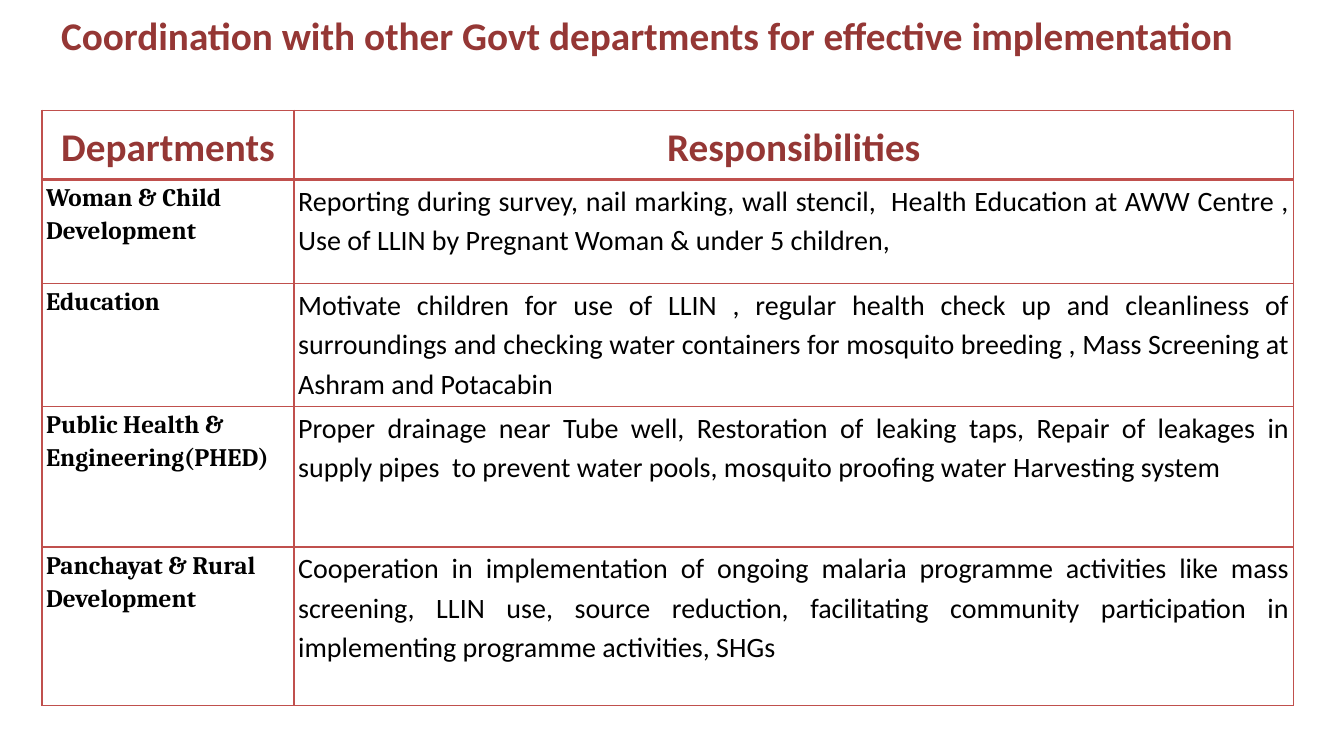
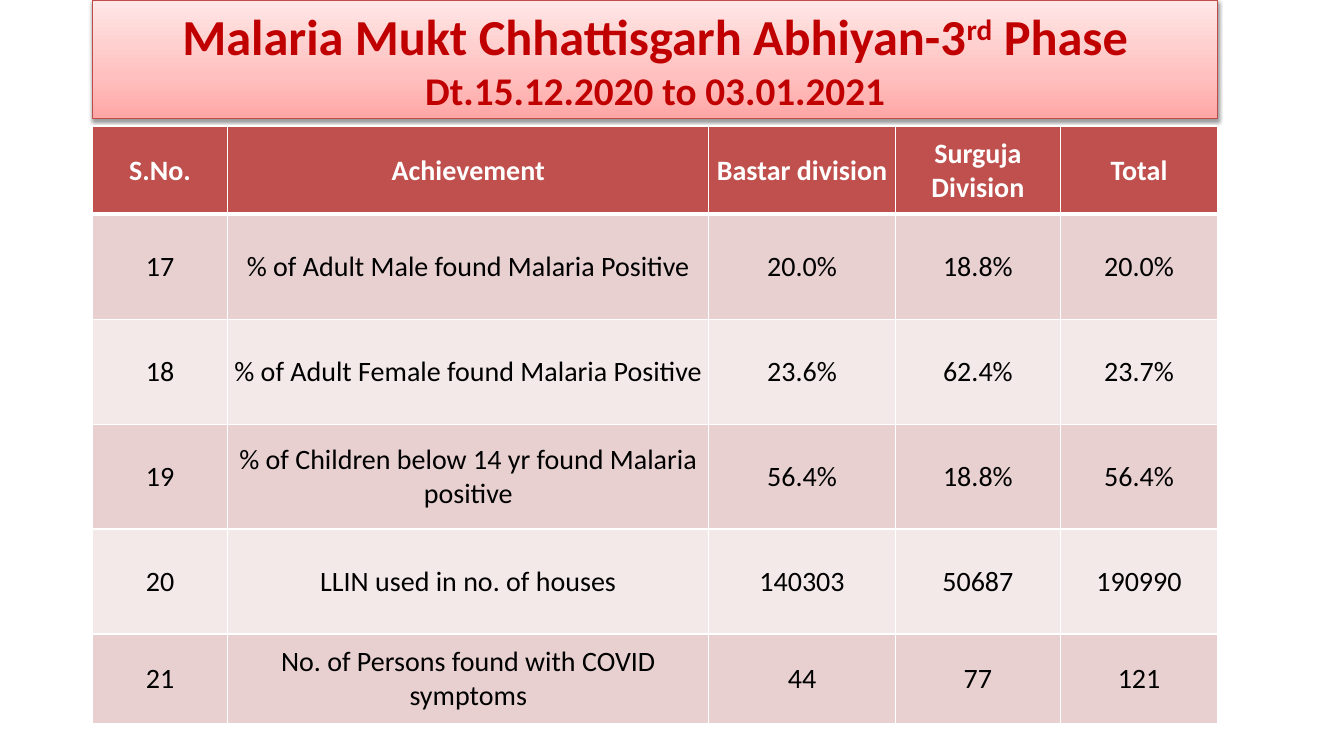
import dataclasses

import pptx
import pptx.dml.color
import pptx.enum.text
import pptx.oxml
import pptx.oxml.ns
import pptx.util

ALIGN = pptx.enum.text.PP_ALIGN
ANCHOR = pptx.enum.text.MSO_ANCHOR
EMU_PER_PX = 9525
TITLE_ONLY = 5


@dataclasses.dataclass(frozen=True)
class Theme:
    body_font: str = "Calibri"
    label_font: str = "Cambria"
    white: str = "FFFFFF"
    black: str = "000000"
    accent: str = "C0504D"
    heading: str = "953735"
    banner_text: str = "C00000"
    banner_line: str = "BF4C48"
    banner_stops: tuple = ((0, "FFA6A5"), (35, "FFC0BF"), (100, "FFE7E7"))
    bands: tuple = ("E8D0D0", "F4E9E9")
    banner_size: int = 36
    heading_size: int = 28
    body_size: int = 20
    label_size: int = 18


@dataclasses.dataclass(frozen=True)
class CellStyle:
    size: int
    color: str
    fill: str
    bold: bool = False
    font: str = Theme.body_font
    align: ALIGN = ALIGN.CENTER
    anchor: ANCHOR = ANCHOR.MIDDLE


@dataclasses.dataclass(frozen=True)
class Grid:
    """Table measures: lengths in px, border widths in points."""
    left: int
    top: int
    columns: tuple
    rows: tuple
    margins: tuple
    border_color: str
    header_border: float
    border: float = 1
    line_spacing: float = 1.0


THEME = Theme()

DEPARTMENTS = [
    ("Departments", "Responsibilities"),
    ("Woman & Child Development",
     "Reporting during survey, nail marking, wall stencil,  Health Education at AWW Centre , "
     "Use of LLIN by Pregnant Woman & under 5 children, "),
    ("Education",
     "Motivate children for use of LLIN , regular health check up and cleanliness of "
     "surroundings and checking water containers for mosquito breeding , "
     "Mass Screening at Ashram and Potacabin"),
    ("Public Health & Engineering(PHED)",
     "Proper drainage near Tube well, Restoration of leaking taps, Repair of leakages in "
     "supply pipes  to prevent water pools, mosquito proofing water Harvesting system "),
    ("Panchayat & Rural Development",
     "Cooperation in implementation of ongoing malaria programme activities like mass "
     "screening, LLIN use, source reduction, facilitating community participation in "
     "implementing programme activities, SHGs"),
]

ACHIEVEMENTS = [
    ("S.No.", "Achievement", "Bastar division", "Surguja Division", "Total"),
    ("17", "% of Adult Male found Malaria Positive", "20.0%", "18.8%", "20.0%"),
    ("18", "% of Adult Female found Malaria Positive", "23.6%", "62.4%", "23.7%"),
    ("19", "% of Children below 14 yr found Malaria positive", "56.4%", "18.8%", "56.4%"),
    ("20", "LLIN used in no. of houses", "140303", "50687", "190990"),
    ("21", "No. of Persons found with COVID symptoms", "44", "77", "121"),
]


def px(length):
    return pptx.util.Emu(length * EMU_PER_PX)


def rgb(color):
    return pptx.dml.color.RGBColor.from_string(color)


def xml(markup):
    return pptx.oxml.parse_xml(markup.replace(">", f" {pptx.oxml.ns.nsdecls('a')}>", 1))


def format_para(para, size, color, bold=True, font=THEME.body_font, align=ALIGN.CENTER):
    para.alignment = align
    para.font.name = font
    para.font.size = pptx.util.Pt(size)
    para.font.bold = bold
    para.font.color.rgb = rgb(color)


def place_title(page, box, anchor):
    """Move the title placeholder to box and return it."""
    title = page.shapes.title
    title.left, title.top, title.width, title.height = map(px, box)
    frame = title.text_frame
    frame.word_wrap = True
    frame.auto_size = pptx.enum.text.MSO_AUTO_SIZE.NONE
    frame.vertical_anchor = anchor
    return title


def add_heading(page, box, text):
    frame = place_title(page, box, ANCHOR.TOP).text_frame
    frame.text = text
    format_para(frame.paragraphs[0], THEME.heading_size, THEME.heading)


def add_banner(page, box, name_parts, dates):
    """Shaded title; name_parts holds (text, is_superscript) pairs."""
    title = place_title(page, box, ANCHOR.MIDDLE)
    name = title.text_frame.paragraphs[0]
    for text, is_superscript in name_parts:
        span = name.add_run()
        span.text = text
        if is_superscript:
            span._r.get_or_add_rPr().set("baseline", "30000")
    format_para(name, THEME.banner_size, THEME.banner_text)
    period = title.text_frame.add_paragraph()
    period.text = dates
    format_para(period, THEME.heading_size, THEME.banner_text)

    stops = "".join(f'<a:gs pos="{position * 1000}"><a:srgbClr val="{color}"/></a:gs>'
                    for position, color in THEME.banner_stops)
    properties = title._element.spPr
    properties.append(xml('<a:prstGeom prst="rect"><a:avLst/></a:prstGeom>'))
    properties.append(xml(f'<a:gradFill rotWithShape="1"><a:gsLst>{stops}</a:gsLst>'
                          '<a:lin ang="16200000" scaled="0"/></a:gradFill>'))
    title.line.color.rgb = rgb(THEME.banner_line)
    title.line.width = pptx.util.Pt(0.75)
    properties.append(xml(
        '<a:effectLst><a:outerShdw blurRad="40000" dist="20000" dir="5400000" rotWithShape="0">'
        f'<a:srgbClr val="{THEME.black}"><a:alpha val="38000"/></a:srgbClr>'
        '</a:outerShdw></a:effectLst>'))


def set_borders(cell, color, widths):
    """Draw the left, right, top and bottom borders, widths in points."""
    properties = cell._tc.get_or_add_tcPr()
    for index, (side, width) in enumerate(zip("LRTB", widths)):
        properties.insert(index, xml(
            f'<a:ln{side} w="{pptx.util.Pt(width)}"><a:solidFill><a:srgbClr val="{color}"/>'
            f'</a:solidFill></a:ln{side}>'))


def fill_cell(cell, text, style, grid):
    cell.margin_left, cell.margin_top, cell.margin_right, cell.margin_bottom = map(px, grid.margins)
    cell.vertical_anchor = style.anchor
    cell.fill.solid()
    cell.fill.fore_color.rgb = rgb(style.fill)
    cell.text = text
    para = cell.text_frame.paragraphs[0]
    para.line_spacing = grid.line_spacing
    format_para(para, style.size, style.color, style.bold, style.font, style.align)


def add_grid(page, grid, records, style_at):
    """Add a table; style_at(row, column) gives the style of each cell."""
    box = (grid.left, grid.top, sum(grid.columns), sum(grid.rows))
    table = page.shapes.add_table(len(grid.rows), len(grid.columns), *map(px, box)).table
    table.first_row = table.horz_banding = False
    for column, width in zip(table.columns, grid.columns):
        column.width = px(width)
    for row, height in zip(table.rows, grid.rows):
        row.height = px(height)
    for row_index, record in enumerate(records):
        top = grid.header_border if row_index == 1 else grid.border
        bottom = grid.header_border if row_index == 0 else grid.border
        for column_index, text in enumerate(record):
            cell = table.cell(row_index, column_index)
            fill_cell(cell, text, style_at(row_index, column_index), grid)
            set_borders(cell, grid.border_color, (grid.border, grid.border, top, bottom))


def department_style(row, column):
    if row == 0:
        return CellStyle(THEME.heading_size, THEME.heading, THEME.white, bold=True)
    if column == 0:
        return CellStyle(THEME.label_size, THEME.black, THEME.white, bold=True,
                         font=THEME.label_font, align=ALIGN.LEFT, anchor=ANCHOR.TOP)
    return CellStyle(THEME.body_size, THEME.black, THEME.white,
                     align=ALIGN.JUSTIFY, anchor=ANCHOR.TOP)


def achievement_style(row, column):
    if row == 0:
        return CellStyle(THEME.body_size, THEME.white, THEME.accent, bold=True)
    return CellStyle(THEME.body_size, THEME.black, THEME.bands[(row - 1) % 2])


def add_page(deck):
    return deck.slides.add_slide(deck.slide_layouts[TITLE_ONLY])


def add_departments_page(deck):
    page = add_page(deck)
    add_heading(page, (48, 6, 1136, 100),
                "Coordination with other Govt departments for effective implementation")
    grid = Grid(left=40, top=105, columns=(240, 952), rows=(66, 99, 117, 134, 151),
                margins=(4, 0, 4, 0), border_color=THEME.accent, header_border=2.25,
                line_spacing=1.15)
    add_grid(page, grid, DEPARTMENTS, department_style)


def add_achievements_page(deck):
    page = add_page(deck)
    grid = Grid(left=88, top=120, columns=(129, 458, 178, 157, 150),
                rows=(84, 100, 100, 100, 100, 85), margins=(1, 1, 1, 0),
                border_color=THEME.white, header_border=3)
    add_banner(page, (grid.left, 0, sum(grid.columns), 113),
               [("Malaria Mukt Chhattisgarh Abhiyan-3", False), ("rd", True), (" Phase", False)],
               "Dt.15.12.2020 to 03.01.2021")
    add_grid(page, grid, ACHIEVEMENTS, achievement_style)


def main():
    deck = pptx.Presentation()
    deck.slide_width, deck.slide_height = px(1280), px(720)
    add_departments_page(deck)
    add_achievements_page(deck)
    deck.save("out.pptx")


if __name__ == "__main__":
    main()
